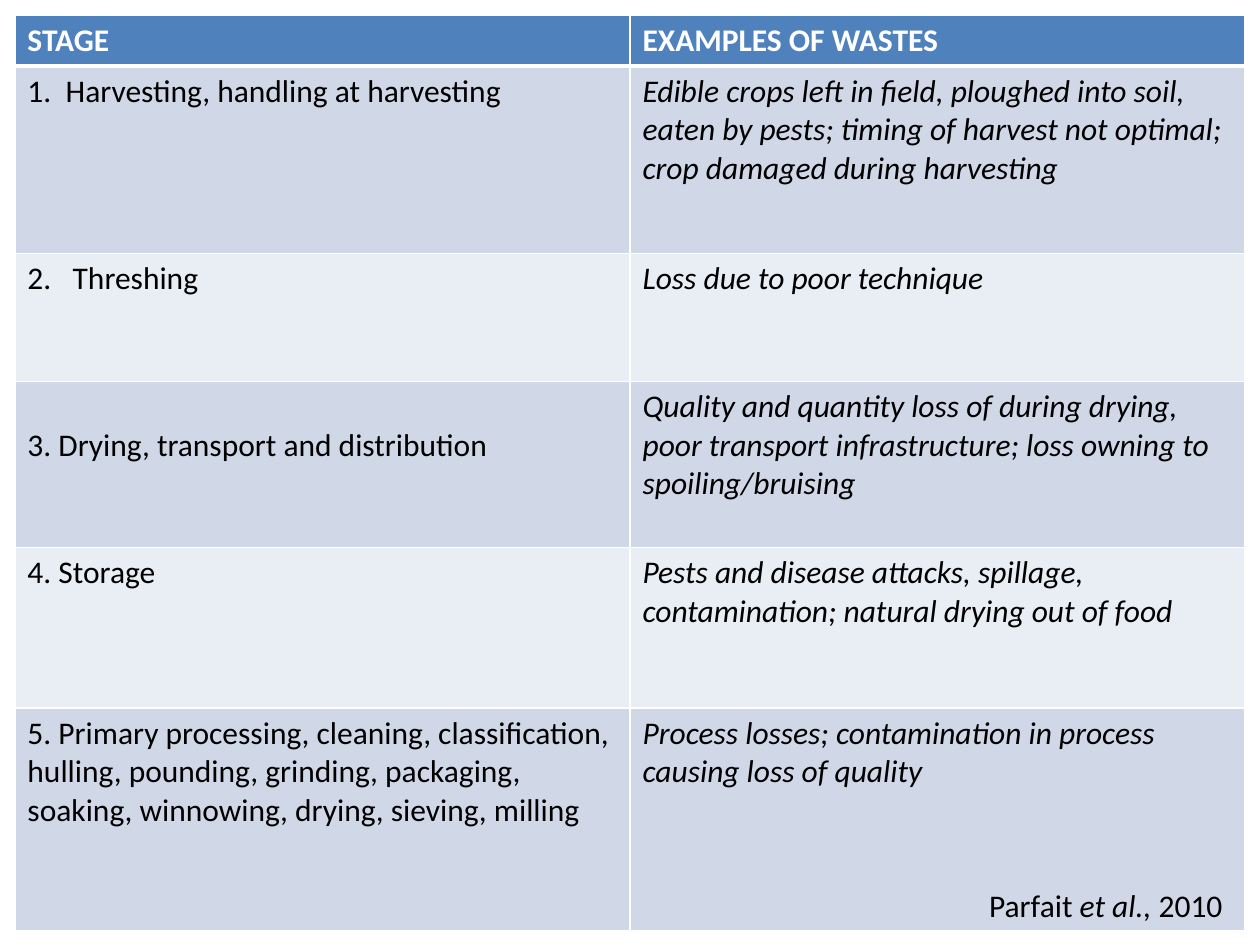
from dataclasses import dataclass

from lxml.etree import SubElement
from pptx import Presentation
from pptx.dml.color import RGBColor as RGB
from pptx.enum.text import MSO_AUTO_SIZE as AutoSize
from pptx.oxml.ns import qn
from pptx.util import Cm, Pt


@dataclass(frozen=True)
class Theme:
    font: str = "Calibri"
    size: int = 18
    text: str = "000000"
    header_text: str = "FFFFFF"
    header_fill: str = "4F81BD"
    bands: tuple = ("D0D8E8", "E9EDF4")
    border: str = "FFFFFF"
    border_width: int = 1
    header_rule: int = 3


HEADERS = ("STAGE", "EXAMPLES OF WASTES")
STAGES = [
    ("1.\tHarvesting, handling at harvesting",
     "Edible crops left in field, ploughed into soil, eaten by pests; "
     "timing of harvest not optimal; crop damaged during harvesting"),
    ("2.\tThreshing", "Loss due to poor technique"),
    ("3. Drying, transport and distribution",
     "Quality and quantity loss of during drying, poor transport "
     "infrastructure; loss owning to spoiling/bruising"),
    ("4. Storage",
     "Pests and disease attacks, spillage, contamination; "
     "natural drying out of food"),
    ("5. Primary processing, cleaning, classification, hulling, pounding, "
     "grinding, packaging, soaking, winnowing, drying, sieving, milling",
     "Process losses; contamination in process causing loss of quality"),
]
ROW_HEIGHTS = (1.0, 3.78, 2.58, 3.35, 3.23, 4.5)
COLUMN_WIDTH = 12.4
# Hanging indents after the stage number, by table row
NUMBER_INDENTS = {1: 0.77, 2: 0.91}
# The drying stage starts one line lower in its cell
LOWERED_ROW, LOWERED_MARGIN = 3, 0.9


class SlideBuilder:
    def __init__(self, slide, theme):
        self.slide = slide
        self.theme = theme

    def add_run(self, paragraph, text, color, bold=False, italic=False):
        run = paragraph.add_run()
        run.text = text
        formats = {"name": self.theme.font, "size": Pt(self.theme.size),
                   "bold": bold, "italic": italic}
        for name, value in formats.items():
            setattr(run.font, name, value)
        run.font.color.rgb = RGB.from_string(color)

    def set_borders(self, cell, widths):
        properties = cell._tc.get_or_add_tcPr()
        for side, width in widths.items():
            line = SubElement(properties, qn(f"a:ln{side}"), w=str(Pt(width)))
            fill = SubElement(line, qn("a:solidFill"))
            SubElement(fill, qn("a:srgbClr"), val=self.theme.border)

    def set_hanging_indent(self, paragraph, indent):
        properties = paragraph._p.get_or_add_pPr()
        properties.set("marL", str(Cm(indent)))
        properties.set("indent", str(-Cm(indent)))

    def fill_cell(self, cell, text, row, column):
        theme = self.theme
        header = row == 0
        widths = dict.fromkeys("LRTB", theme.border_width)
        if header:
            widths["B"] = theme.header_rule
        elif row == 1:
            widths["T"] = theme.header_rule
        self.set_borders(cell, widths)
        fill = theme.header_fill if header else theme.bands[(row - 1) % 2]
        cell.fill.solid()
        cell.fill.fore_color.rgb = RGB.from_string(fill)
        paragraph = cell.text_frame.paragraphs[0]
        self.add_run(paragraph, text,
                     theme.header_text if header else theme.text,
                     bold=header, italic=column == 1 and not header)
        if column == 0 and row in NUMBER_INDENTS:
            self.set_hanging_indent(paragraph, NUMBER_INDENTS[row])
        if column == 0 and row == LOWERED_ROW:
            cell.margin_top = Cm(LOWERED_MARGIN)

    def add_table(self, rows, left, top):
        columns = len(rows[0])
        frame = self.slide.shapes.add_table(
            len(rows), columns, Cm(left), Cm(top),
            Cm(COLUMN_WIDTH * columns), Cm(sum(ROW_HEIGHTS)))
        table = frame.table
        for column in table.columns:
            column.width = Cm(COLUMN_WIDTH)
        for row, height in zip(table.rows, ROW_HEIGHTS):
            row.height = Cm(height)
        for row, texts in enumerate(rows):
            for column, text in enumerate(texts):
                self.fill_cell(table.cell(row, column), text, row, column)

    def add_text(self, runs, left, top, width, height):
        shape = self.slide.shapes.add_textbox(
            Cm(left), Cm(top), Cm(width), Cm(height))
        frame = shape.text_frame
        frame.word_wrap = False
        frame.auto_size = AutoSize.SHAPE_TO_FIT_TEXT
        for text, italic in runs:
            self.add_run(frame.paragraphs[0], text, self.theme.text,
                         italic=italic)


def main():
    presentation = Presentation()
    presentation.slide_width = Cm(25.4)
    presentation.slide_height = Cm(19.05)
    slide = presentation.slides.add_slide(presentation.slide_layouts[6])
    builder = SlideBuilder(slide, Theme())

    # Stages and their wastes
    builder.add_table([HEADERS, *STAGES], 0.3, 0.3)

    # Citation
    builder.add_text([("Parfait ", False), ("et al., ", True), ("2010", False)],
                     19.69, 17.73, 5.44, 1.02)

    presentation.save("out.pptx")


if __name__ == "__main__":
    main()
